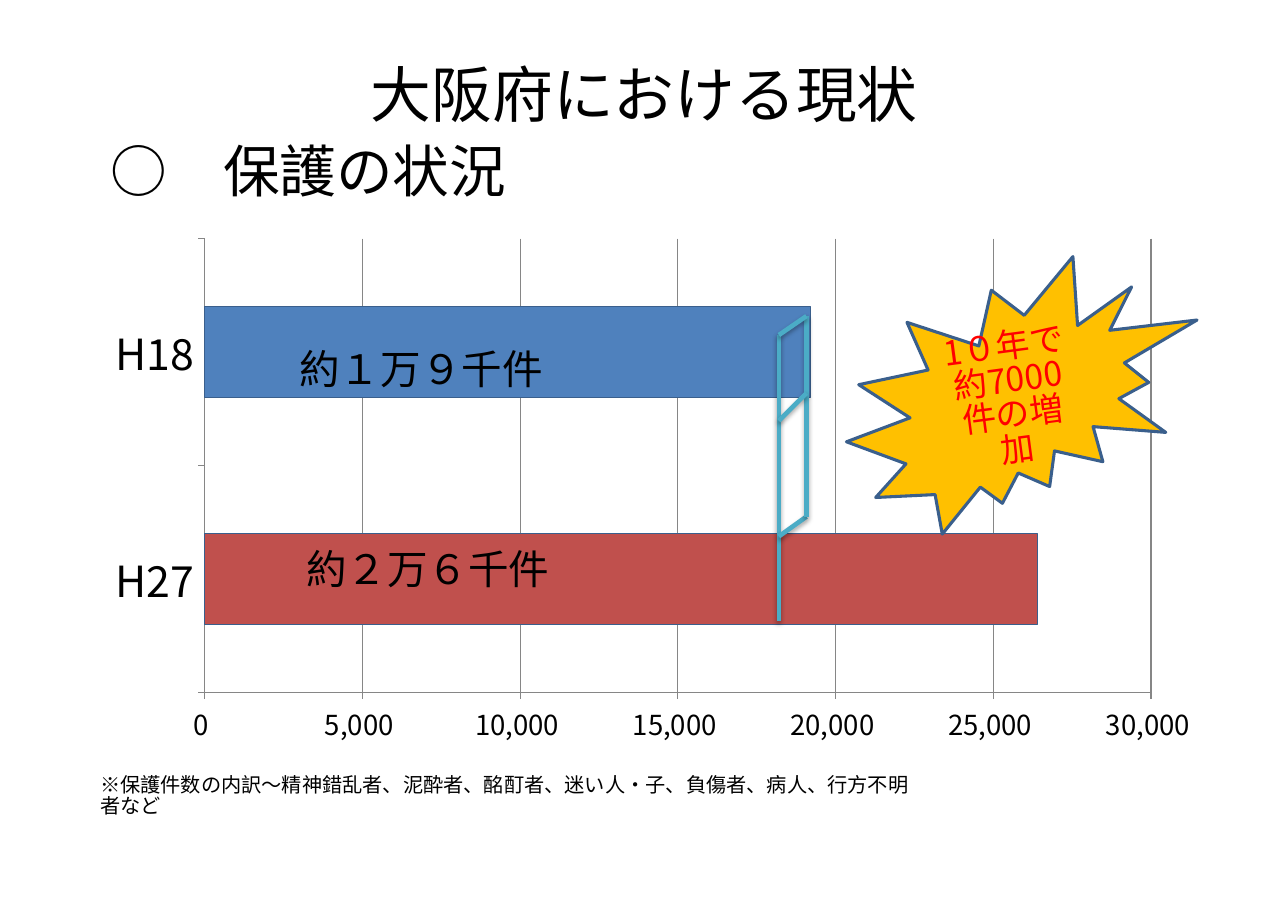
"""Build the slide on protection cases in Osaka Prefecture."""
from lxml import etree
from pptx import Presentation
from pptx.chart.data import CategoryChartData
from pptx.dml.color import RGBColor
from pptx.enum.chart import XL_CHART_TYPE, XL_TICK_MARK
from pptx.enum.shapes import MSO_CONNECTOR, MSO_SHAPE
from pptx.enum.text import MSO_ANCHOR, MSO_AUTO_SIZE, PP_ALIGN
from pptx.oxml import parse_xml
from pptx.oxml.ns import nsdecls, qn
from pptx.util import Pt

BAR = XL_CHART_TYPE.BAR_CLUSTERED
TICK_OUT = XL_TICK_MARK.OUTSIDE
STRAIGHT = MSO_CONNECTOR.STRAIGHT
SEAL = MSO_SHAPE.EXPLOSION2
TOP, MIDDLE = MSO_ANCHOR.TOP, MSO_ANCHOR.MIDDLE
NO_FIT = MSO_AUTO_SIZE.NONE
LEFT, CENTER = PP_ALIGN.LEFT, PP_ALIGN.CENTER

FONT = "Noto Sans CJK JP"
COLORS = {
    "text": "000000", "alert": "FF0000", "seal": "FFC000", "outline": "3A5F8C",
    "H18": "4F81BD", "H27": "C0504D", "break": "4BACC6", "grid": "868686",
}
CASES = {"H27": 26400, "H18": 19200}
PLOT = {"x": 0.11, "y": 0.034, "w": 0.838, "h": 0.841}


def rgb(name):
    """Return the named colour."""
    return RGBColor.from_string(COLORS[name])


def set_font(font, size, color="text"):
    """Apply the slide's typeface to Latin and East Asian text."""
    font.name, font.size = FONT, Pt(size)
    font.color.rgb = rgb(color)


def write(frame, text, size, color="text", align=LEFT, anchor=TOP,
          spacing=0.85, before=0, inset=(7.2, 3.6)):
    """Fill a text frame, one paragraph per line of text."""
    frame.word_wrap, frame.auto_size = True, NO_FIT
    frame.vertical_anchor = anchor
    frame.margin_left = frame.margin_right = Pt(inset[0])
    frame.margin_top = frame.margin_bottom = Pt(inset[1])
    frame.text = text
    for paragraph in frame.paragraphs:
        paragraph.alignment = align
        paragraph.line_spacing = spacing
        paragraph.space_before = Pt(before)
        for run in paragraph.runs:
            set_font(run.font, size, color)
            latin = run.font._element.find(qn("a:latin"))
            latin.addnext(parse_xml(f'<a:ea {nsdecls("a")} typeface="{FONT}"/>'))


class SlideBuilder:
    """Hold the current slide and draw its elements in points."""

    def __init__(self, slide):
        self.slide = slide
        self.shapes = slide.shapes

    def title(self, text, box, **style):
        """Move and format the title placeholder."""
        title = self.shapes.title
        title.left, title.top, title.width, title.height = map(Pt, box)
        write(title.text_frame, text, **style)

    def text(self, text, box, **style):
        """Add a text box."""
        write(self.shapes.add_textbox(*map(Pt, box)).text_frame, text, **style)

    def seal(self, text, box, rotation, **style):
        """Add the tilted starburst."""
        seal = self.shapes.add_shape(SEAL, *map(Pt, box))
        seal.rotation = rotation
        seal.shadow.inherit = False
        seal.fill.solid()
        seal.fill.fore_color.rgb = rgb("seal")
        seal.line.color.rgb = rgb("outline")
        seal.line.width = Pt(2)
        write(seal.text_frame, text, **style)

    def line(self, start, end):
        """Add one softly shadowed stroke of the bar break."""
        line = self.shapes.add_connector(STRAIGHT, *map(Pt, start + end))
        line.line.color.rgb = rgb("break")
        line.line.width = Pt(3)
        effects = etree.SubElement(line._element.spPr, qn("a:effectLst"))
        effects.append(parse_xml(
            f'<a:outerShdw {nsdecls("a")} blurRad="{Pt(3.1)}" dist="{Pt(1.8)}" '
            'dir="5400000" rotWithShape="0"><a:srgbClr val="000000">'
            '<a:alpha val="35000"/></a:srgbClr></a:outerShdw>'))

    def bar_chart(self, cases, box):
        """Add the bar chart with one colour per year."""
        data = CategoryChartData()
        data.categories = list(cases)
        data.add_series("Series 1", list(cases.values()))
        chart = self.shapes.add_chart(BAR, *map(Pt, box), data).chart
        chart.has_legend = chart.has_title = False
        set_font(chart.font, 18)
        plot = chart.plots[0]
        plot.gap_width = 150
        plot.vary_by_categories = False
        for index, year in enumerate(cases):
            bar = plot.series[0].points[index].format
            bar.fill.solid()
            bar.fill.fore_color.rgb = rgb(year)
            bar.line.color.rgb = rgb("outline")
            bar.line.width = Pt(0.75)
        years, counts = chart.category_axis, chart.value_axis
        for axis, size in ((years, 28), (counts, 18)):
            axis.major_tick_mark = TICK_OUT
            axis.format.line.color.rgb = rgb("grid")
            set_font(axis.tick_labels.font, size)
        counts.minimum_scale, counts.maximum_scale = 0, 30000
        counts.major_unit = 5000
        counts.tick_labels.number_format = r"#,##0_);[Red]\(#,##0\)"
        counts.tick_labels.number_format_is_linked = False
        counts.has_major_gridlines = True
        counts.major_gridlines.format.line.color.rgb = rgb("grid")
        self.place_plot(chart)

    def place_plot(self, chart):
        """Fix the inner plot area as shares of the chart frame."""
        area = chart._chartSpace.chart.plotArea
        for automatic in area.findall(qn("c:layout")):
            area.remove(automatic)
        modes = "".join(f'<c:{side}Mode val="edge"/>' for side in "xy")
        shares = "".join(f'<c:{side} val="{share}"/>' for side, share in PLOT.items())
        area.insert(0, parse_xml(
            f'<c:layout {nsdecls("c")}><c:manualLayout><c:layoutTarget val="inner"/>'
            f'{modes}{shares}</c:manualLayout></c:layout>'))


def main():
    """Compose and save the slide."""
    deck = Presentation()
    deck.slide_width, deck.slide_height = Pt(841.68), Pt(595.44)
    page = SlideBuilder(deck.slides.add_slide(deck.slide_layouts[5]))

    page.title("大阪府における現状", (64, 23.8, 714, 74), size=39.7, align=CENTER,
               anchor=MIDDLE, spacing=1, inset=(7.9, 4.3))
    page.text("○　保護の状況", (64, 91.4, 714, 50), size=37, inset=(7.9, 4.3))
    page.bar_chart(CASES, (52.6, 144, 738, 352.8))
    page.text("※保護件数の内訳～精神錯乱者、泥酔者、酩酊者、迷い人・子、負傷者、病人、行方不明者など",
              (58.3, 504, 544.3, 40), size=13.2)
    page.seal("1０年で\n約7000件の増加", (550, 172.8, 237.6, 168.5), 352.4,
              size=22.1, color="alert", align=CENTER, anchor=MIDDLE)

    near, far = 509, 527
    for start, end in (
        ((near, 219), (near, 406)),
        ((near, 350.6), (far, 337.7)),
        ((far, 206.6), (far, 337.7)),
        ((near, 219), (far, 206.6)),
        ((near, 275), (far, 257)),
    ):
        page.line(start, end)

    for label, left, top in (("約１万９千件", 188.6, 226), ("約２万６千件", 193, 357)):
        page.text(label, (left, top, 212.4, 39), size=26.5)
    deck.save("out.pptx")


if __name__ == "__main__":
    main()
